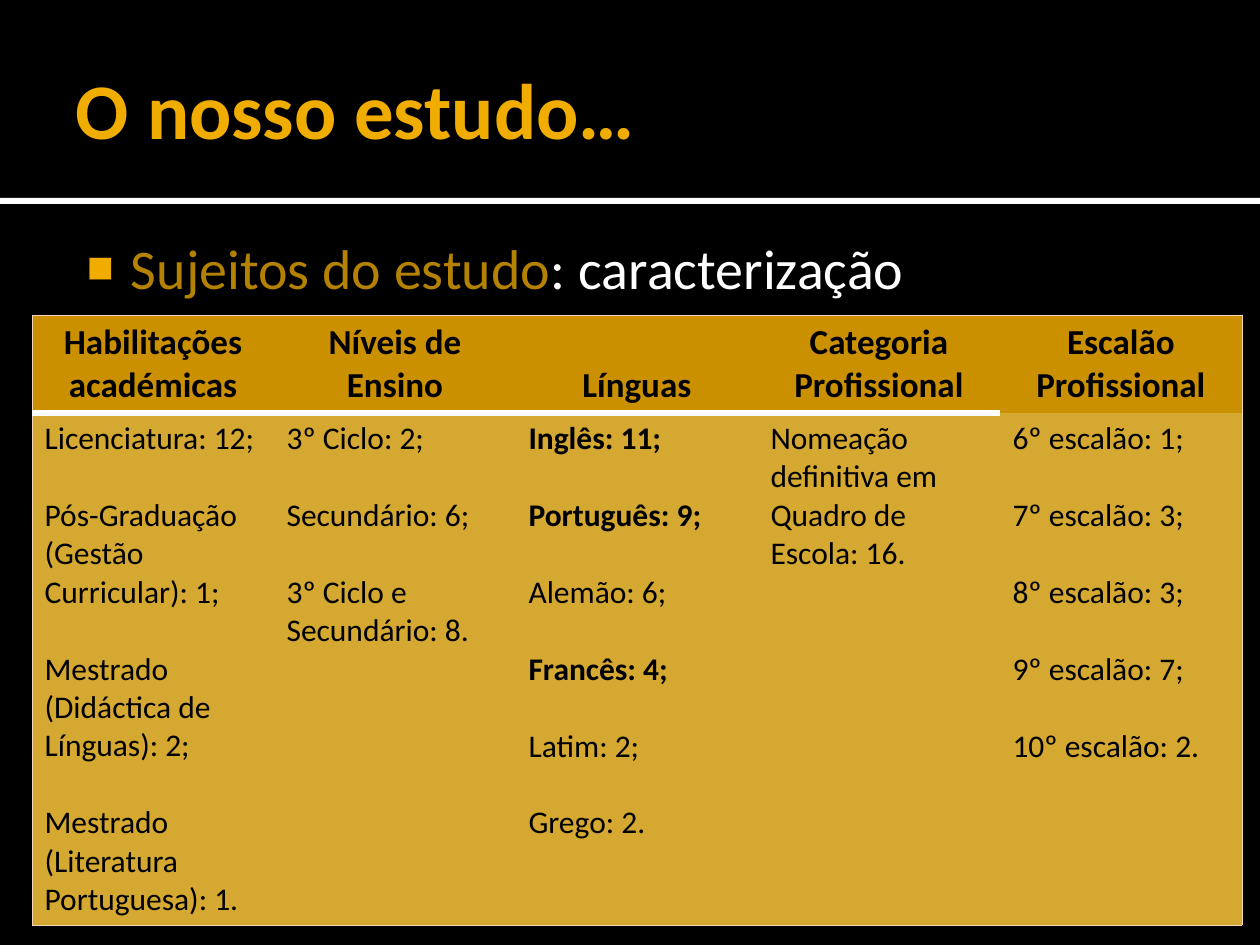
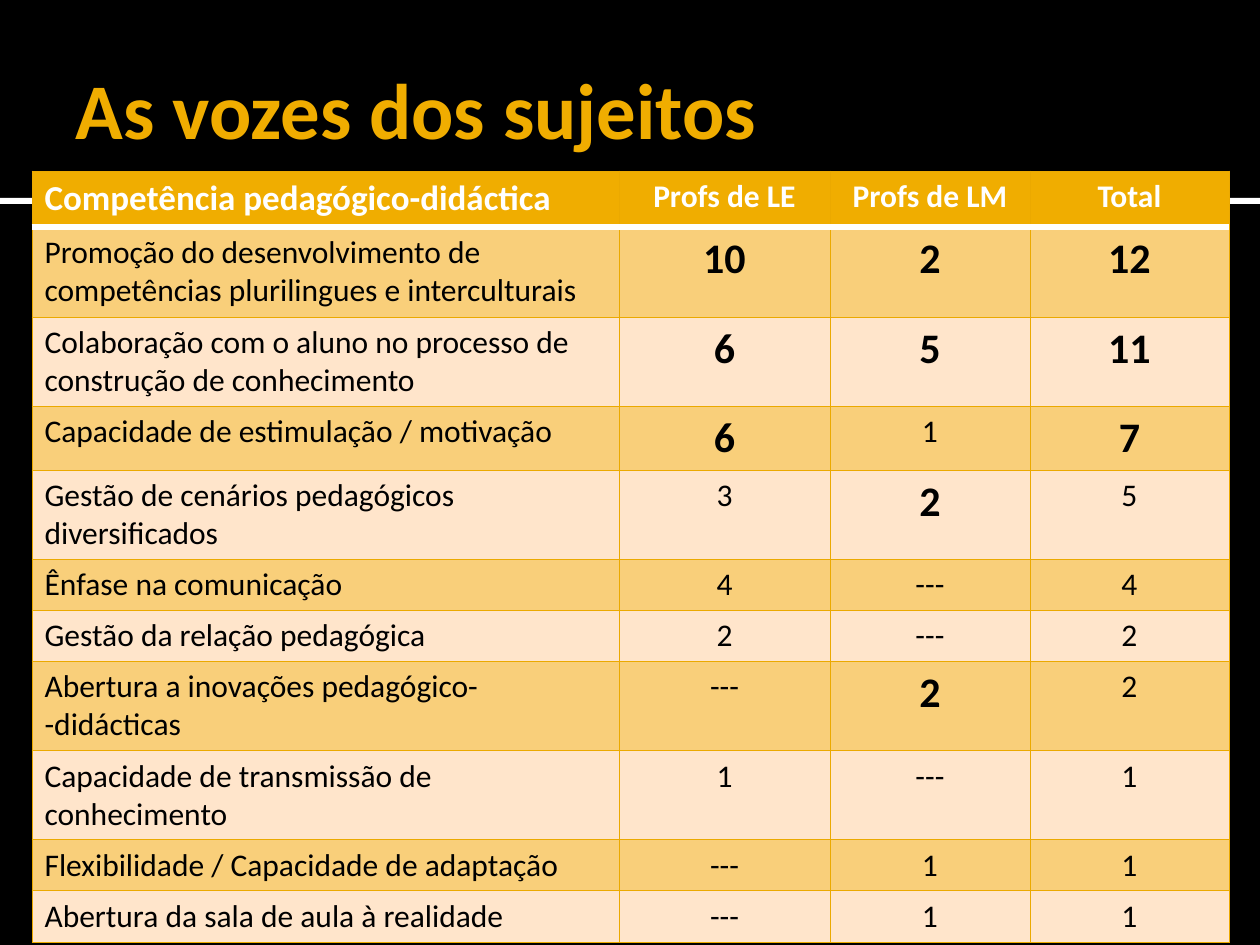
from dataclasses import dataclass
from typing import NamedTuple

from lxml.etree import SubElement
from pptx import Presentation
from pptx.dml.color import RGBColor
from pptx.enum.shapes import MSO_SHAPE
from pptx.enum.text import MSO_ANCHOR, PP_ALIGN
from pptx.oxml.ns import qn
from pptx.slide import Slide
from pptx.table import _Cell
from pptx.text.text import TextFrame, _Run
from pptx.util import Emu, Pt

PX = 914400 / 126
FONT = "Calibri"
PLAIN_STYLE = "{2D5ABB26-0587-4C30-8999-92F81FD0307C}"

BLACK = RGBColor(0x00, 0x00, 0x00)
WHITE = RGBColor(0xFF, 0xFF, 0xFF)
AMBER = RGBColor(0xF0, 0xAD, 0x00)
DARK_AMBER = RGBColor(0xB4, 0x82, 0x00)
OCHRE = RGBColor(0xCA, 0x90, 0x00)
LIGHT_OCHRE = RGBColor(0xD5, 0xA8, 0x32)
BAND = RGBColor(0xF9, 0xCF, 0x7A)
PALE_BAND = RGBColor(0xFF, 0xE5, 0xCB)
PEACH_LINE = RGBColor(0xF4, 0xD6, 0xB7)
AMBER_LINE = RGBColor(0xEB, 0xA9, 0x00)


class Entry(NamedTuple):
    text: str
    size: int = 18
    bold: bool = False


class Box(NamedTuple):
    left: int
    top: int
    width: int
    height: int


@dataclass(frozen=True)
class TableSpec:
    left: int
    top: int
    widths: list[int]
    heights: list[int]
    cells: list[list[list[Entry]]]
    header_fill: RGBColor
    header_color: RGBColor
    header_anchor: MSO_ANCHOR
    bands: list[RGBColor]
    line: RGBColor
    inner_lines: bool
    rule_columns: int
    centered_header: int
    centered_body: int
    gap: int


TITLE_BOX = Box(63, 22, 1134, 172)
BODY_BOX = Box(63, 220, 1134, 725)
RULE_BOX = Box(0, 198, 1260, 6)


def px(n: int) -> Emu:
    return Emu(round(n * PX))


def place(box: Box) -> list[Emu]:
    return [px(n) for n in box]


def style(r: _Run, size: int, color: RGBColor, bold: bool = False) -> None:
    r.font.name = FONT
    r.font.size = Pt(size)
    r.font.bold = bold
    r.font.color.rgb = color


def add_text(s: Slide, box: Box, insets: Box) -> TextFrame:
    tf = s.shapes.add_textbox(*place(box)).text_frame
    tf.word_wrap = True
    tf.margin_left, tf.margin_top, tf.margin_right, tf.margin_bottom = place(insets)
    return tf


def add_slide(prs: Presentation, title: str) -> Slide:
    s = prs.slides.add_slide(prs.slide_layouts[6])
    s.background.fill.solid()
    s.background.fill.fore_color.rgb = BLACK
    sp = s.shapes.add_shape(MSO_SHAPE.RECTANGLE, *place(RULE_BOX))
    sp.shadow.inherit = False
    sp.fill.solid()
    sp.fill.fore_color.rgb = WHITE
    sp.line.fill.background()
    tf = add_text(s, TITLE_BOX, Box(13, 6, 6, 6))
    tf.vertical_anchor = MSO_ANCHOR.MIDDLE
    tf.text = title
    style(tf.paragraphs[0].runs[0], 45, AMBER, True)
    return s


def add_bullet(s: Slide, lead: str, rest: str) -> None:
    p = add_text(s, BODY_BOX, Box(8, 13, 13, 6)).paragraphs[0]
    for text, color in ((lead, DARK_AMBER), (rest, WHITE)):
        r = p.add_run()
        r.text = text
        style(r, 32, color)
    pPr = p._p.get_or_add_pPr()
    pPr.set("marL", str(px(60)))
    pPr.set("indent", str(px(-44)))
    SubElement(SubElement(pPr, qn("a:buClr")), qn("a:srgbClr"), val=str(AMBER))
    SubElement(pPr, qn("a:buSzPct"), val="80000")
    SubElement(pPr, qn("a:buFont"), typeface="Arial")
    SubElement(pPr, qn("a:buChar"), char="■")


def add_border(cell: _Cell, side: str, color: RGBColor, width: float) -> None:
    tcPr = cell._tc.get_or_add_tcPr()
    ln = SubElement(tcPr, qn(f"a:ln{side}"), w=str(Pt(width)))
    SubElement(SubElement(ln, qn("a:solidFill")), qn("a:srgbClr"), val=str(color))


def draw_borders(cell: _Cell, spec: TableSpec, row: int, col: int) -> None:
    outer = {
        "L": col == 0,
        "R": col == len(spec.widths) - 1,
        "T": row == 0,
        "B": row == len(spec.heights) - 1,
    }
    for side, on_edge in outer.items():
        under_header = (row, side) in ((0, "B"), (1, "T"))
        if under_header and col < spec.rule_columns:
            add_border(cell, side, WHITE, 3.8)
        elif on_edge or spec.inner_lines:
            add_border(cell, side, spec.line, 0.5)


def fill_cell(cell: _Cell, spec: TableSpec, row: int, col: int) -> None:
    header = row == 0
    draw_borders(cell, spec, row, col)
    cell.fill.solid()
    cell.fill.fore_color.rgb = (
        spec.header_fill if header else spec.bands[(row - 1) % len(spec.bands)]
    )
    cell.vertical_anchor = spec.header_anchor if header else MSO_ANCHOR.TOP
    first_centered = spec.centered_header if header else spec.centered_body
    entries = spec.cells[row][col]
    tf = cell.text_frame
    tf.text = "\n".join(entry.text for entry in entries)
    for i, (p, entry) in enumerate(zip(tf.paragraphs, entries)):
        p.alignment = PP_ALIGN.CENTER if col >= first_centered else PP_ALIGN.LEFT
        p.space_before = Pt(spec.gap if i else 0)
        color = spec.header_color if header else BLACK
        style(p.runs[0], entry.size, color, entry.bold)


def draw_table(s: Slide, spec: TableSpec) -> None:
    box = Box(spec.left, spec.top, sum(spec.widths), sum(spec.heights))
    table = s.shapes.add_table(
        len(spec.heights), len(spec.widths), *place(box)
    ).table
    table._tbl.tblPr.find(qn("a:tableStyleId")).text = PLAIN_STYLE
    for column, width in zip(table.columns, spec.widths):
        column.width = px(width)
    for row, height in enumerate(spec.heights):
        table.rows[row].height = px(height)
        for col in range(len(spec.widths)):
            fill_cell(table.cell(row, col), spec, row, col)


def plain(*lines: str) -> list[Entry]:
    return [Entry(line) for line in lines]


def strong(text: str, size: int = 24) -> list[Entry]:
    return [Entry(text, size, True)]


SUBJECTS = TableSpec(
    left=32,
    top=315,
    widths=[242] * 5,
    heights=[98, 512],
    cells=[
        [
            strong(text, 20)
            for text in (
                "Habilitações académicas",
                "Níveis de Ensino",
                "Línguas",
                "Categoria Profissional",
                "Escalão Profissional",
            )
        ],
        [
            plain(
                "Licenciatura: 12;",
                "Pós-Graduação (Gestão Curricular): 1;",
                "Mestrado (Didáctica de Línguas): 2;",
                "Mestrado (Literatura Portuguesa): 1.",
            ),
            plain("3º Ciclo: 2;", "Secundário: 6;", "3º Ciclo e Secundário: 8."),
            [
                Entry("Inglês: 11;", bold=True),
                Entry("Português: 9;", bold=True),
                Entry("Alemão: 6;"),
                Entry("Francês: 4;", bold=True),
                Entry("Latim: 2;"),
                Entry("Grego: 2."),
            ],
            plain("Nomeação definitiva em Quadro de Escola: 16."),
            plain(
                "6º escalão: 1;",
                "7º escalão: 3;",
                "8º escalão: 3;",
                "9º escalão: 7;",
                "10º escalão: 2.",
            ),
        ],
    ],
    header_fill=OCHRE,
    header_color=BLACK,
    header_anchor=MSO_ANCHOR.BOTTOM,
    bands=[LIGHT_OCHRE],
    line=PEACH_LINE,
    inner_lines=False,
    rule_columns=4,
    centered_header=0,
    centered_body=5,
    gap=22,
)

VOICES = TableSpec(
    left=32,
    top=171,
    widths=[587, 211, 200, 199],
    heights=[56, 90, 89, 64, 89, 51, 51, 90, 89, 51, 52],
    cells=[
        [
            strong("Competência pedagógico-didáctica", 20),
            *(strong(text, 18) for text in ("Profs de LE", "Profs de LM", "Total")),
        ],
        [
            plain("Promoção do desenvolvimento de competências plurilingues e interculturais"),
            strong("10"), strong("2"), strong("12"),
        ],
        [
            plain("Colaboração com o aluno no processo de construção de conhecimento"),
            strong("6"), strong("5"), strong("11"),
        ],
        [
            plain("Capacidade de estimulação / motivação"),
            strong("6"), plain("1"), strong("7"),
        ],
        [
            plain("Gestão de cenários pedagógicos diversificados"),
            plain("3"), strong("2"), plain("5"),
        ],
        [plain("Ênfase na comunicação"), plain("4"), plain("---"), plain("4")],
        [plain("Gestão da relação pedagógica"), plain("2"), plain("---"), plain("2")],
        [
            plain("Abertura a inovações pedagógico-", "-didácticas"),
            plain("---"), strong("2"), plain("2"),
        ],
        [
            plain("Capacidade de transmissão de conhecimento"),
            plain("1"), plain("---"), plain("1"),
        ],
        [
            plain("Flexibilidade / Capacidade de adaptação"),
            plain("---"), plain("1"), plain("1"),
        ],
        [
            plain("Abertura da sala de aula à realidade"),
            plain("---"), plain("1"), plain("1"),
        ],
    ],
    header_fill=AMBER,
    header_color=WHITE,
    header_anchor=MSO_ANCHOR.TOP,
    bands=[BAND, PALE_BAND],
    line=AMBER_LINE,
    inner_lines=True,
    rule_columns=4,
    centered_header=1,
    centered_body=1,
    gap=0,
)


def main() -> None:
    """Build the study slides and save them."""
    prs = Presentation()
    prs.slide_width, prs.slide_height = px(1260), px(945)
    s = add_slide(prs, "O nosso estudo…")
    add_bullet(s, "Sujeitos do estudo", ": caracterização")
    draw_table(s, SUBJECTS)
    draw_table(add_slide(prs, "As vozes dos sujeitos"), VOICES)
    prs.save("out.pptx")


if __name__ == "__main__":
    main()
